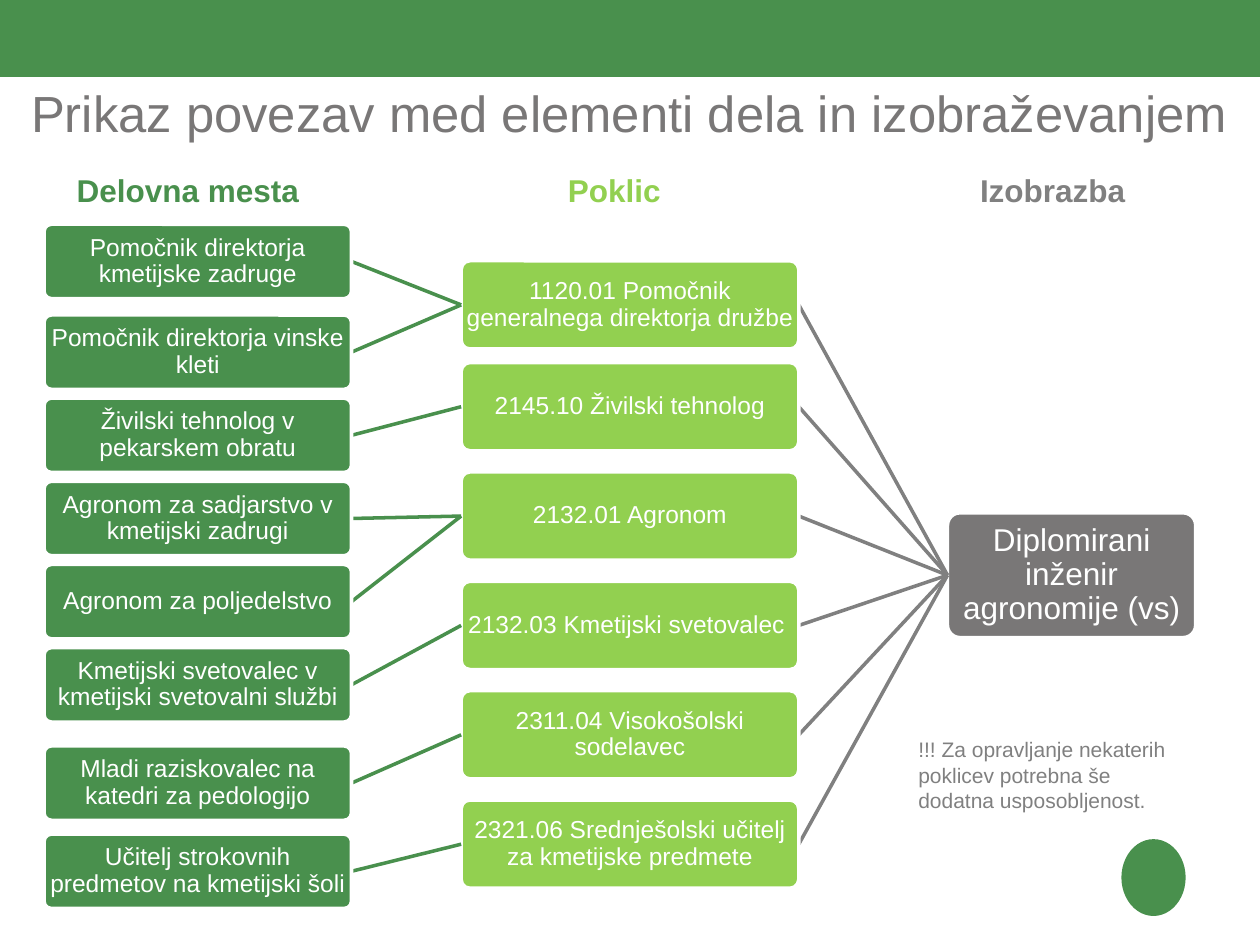
from dataclasses import dataclass, field
from typing import Iterator

from lxml import etree
from pptx import Presentation
from pptx import util as u
from pptx.dml import color
from pptx.enum import shapes, text
from pptx.oxml import ns

COLUMNS, ROWS = 100, 75
CELL = u.Inches(0.1)
FONT = "Arial"
COLORS = {
    "job": "49904D",
    "occupation": "92D050",
    "education": "797777",
    "muted": "808080",
    "white": "FFFFFF",
}


@dataclass(frozen=True)
class Tier:
    left: float
    width: float
    height: float
    first_row: float
    pitch: float
    fill: str
    link: str
    size: int


@dataclass(frozen=True)
class Node:
    label: str
    nudge: float = 0
    children: list["Node"] = field(default_factory=list)


@dataclass(frozen=True)
class Caption:
    label: str
    left: float
    top: float
    width: float
    height: float
    size: int
    ink: str
    bold: bool = False
    wrap: bool = False
    align: text.PP_ALIGN = text.PP_ALIGN.LEFT


TIERS = [
    Tier(75.2, 19.7, 9.9, 40.7, 0, "education", "muted", 18),
    Tier(36.6, 26.8, 7, 20.1, 8.68, "occupation", "muted", 14),
    Tier(3.5, 24.4, 5.9, 18.4, 6.6, "job", "job", 14),
]

EDUCATION = Node("Diplomirani inženir agronomije (vs)", children=[
    Node("1120.01 Pomočnik generalnega direktorja družbe", 0.6, [
        Node("Pomočnik direktorja kmetijske zadruge", -0.6),
        Node("Pomočnik direktorja vinske kleti"),
    ]),
    Node("2145.10 Živilski tehnolog", children=[
        Node("Živilski tehnolog v pekarskem obratu"),
    ]),
    Node("2132.01 Agronom", children=[
        Node("Agronom za sadjarstvo v kmetijski zadrugi"),
        Node("Agronom za poljedelstvo"),
    ]),
    Node("2132.03 Kmetijski svetovalec ", children=[
        Node("Kmetijski svetovalec v kmetijski svetovalni službi"),
    ]),
    Node("2311.04 Visokošolski sodelavec", children=[
        Node("Mladi raziskovalec na katedri za pedologijo", 1.2),
    ]),
    Node("2321.06 Srednješolski učitelj za kmetijske predmete", children=[
        Node("Učitelj strokovnih predmetov na kmetijski šoli", 1.6),
    ]),
])

CAPTIONS = [
    Caption("Prikaz povezav med elementi dela in izobraževanjem", 0, 6, COLUMNS, 5.9,
            29, "education", wrap=True, align=text.PP_ALIGN.CENTER),
    Caption("Delovna mesta", 5.1, 13.1, 19.8, 4, 18, "job", bold=True),
    Caption("Poklic", 44.1, 13.1, 9.4, 4, 18, "occupation", bold=True),
    Caption("Izobrazba", 76.8, 13.1, 13.6, 4, 18, "muted", bold=True),
    Caption("!!! Za opravljanje nekaterih poklicev potrebna še dodatna usposobljenost.",
            71.9, 58, 23.4, 7.1, 12, "muted", wrap=True),
]


def rgb(name: str) -> color.RGBColor:
    return color.RGBColor.from_string(COLORS[name])


def grid(*cells: float) -> list[int]:
    return [round(cell * CELL) for cell in cells]


def write(frame, label: str, size: int, ink: str, align: text.PP_ALIGN,
          bold: bool = False):
    paragraph = frame.paragraphs[0]
    paragraph.text = label
    paragraph.alignment = align
    paragraph.font.name = FONT
    paragraph.font.size = u.Pt(size)
    paragraph.font.bold = bold
    paragraph.font.color.rgb = rgb(ink)
    return paragraph


def draw_plain(slide, kind: shapes.MSO_SHAPE, place: list[int], fill: str):
    shape = slide.shapes.add_shape(kind, *place)
    shape.shadow.inherit = False
    shape.fill.solid()
    shape.fill.fore_color.rgb = rgb(fill)
    shape.line.fill.background()
    return shape


def draw_box(slide, tier: Tier, label: str, top: float) -> None:
    box = draw_plain(slide, shapes.MSO_SHAPE.ROUNDED_RECTANGLE,
                     grid(tier.left, top, tier.width, tier.height), tier.fill)
    box.adjustments[0] = 0.1
    box.line.color.rgb = rgb("white")
    box.line.width = u.Pt(2)
    frame = box.text_frame
    frame.word_wrap = True
    frame.vertical_anchor = text.MSO_ANCHOR.MIDDLE
    frame.margin_left = frame.margin_right = u.Inches(0.01)
    frame.margin_top = frame.margin_bottom = u.Inches(0.01)
    paragraph = write(frame, label, tier.size, "white", text.PP_ALIGN.CENTER)
    paragraph.line_spacing = 0.9


def draw_link(slide, start: tuple[float, float], end: tuple[float, float],
              ink: str) -> None:
    link = slide.shapes.add_connector(shapes.MSO_CONNECTOR.STRAIGHT,
                                      *grid(*start, *end))
    link.line.color.rgb = rgb(ink)
    link.line.width = u.Pt(2)
    etree.SubElement(link.element.spPr, ns.qn("a:effectLst"))


def draw_branch(slide, node: Node, used: list[int], level: int = 0,
                anchor: tuple[float, float] | None = None) -> None:
    tier = TIERS[level]
    top = tier.first_row + used[level] * tier.pitch + node.nudge
    used[level] += 1
    middle = top + tier.height / 2
    if anchor:
        draw_link(slide, anchor, (tier.left + tier.width, middle), tier.link)
    draw_box(slide, tier, node.label, top)
    for child in node.children:
        draw_branch(slide, child, used, level + 1, (tier.left, middle))


def draw_caption(slide, caption: Caption) -> None:
    box = slide.shapes.add_textbox(
        *grid(caption.left, caption.top, caption.width, caption.height))
    box.text_frame.word_wrap = caption.wrap
    write(box.text_frame, caption.label, caption.size, caption.ink,
          caption.align, caption.bold)


def main() -> None:
    deck = Presentation()
    deck.slide_width, deck.slide_height = grid(COLUMNS, ROWS)
    slide = deck.slides.add_slide(deck.slide_layouts[6])
    draw_plain(slide, shapes.MSO_SHAPE.RECTANGLE, grid(0, 0, COLUMNS, 6.1), "job")
    draw_plain(slide, shapes.MSO_SHAPE.OVAL, grid(89, 66.6, 5.1, 6.1), "job")
    draw_branch(slide, EDUCATION, [0] * len(TIERS))
    for caption in CAPTIONS:
        draw_caption(slide, caption)
    deck.save("out.pptx")


if __name__ == "__main__":
    main()
